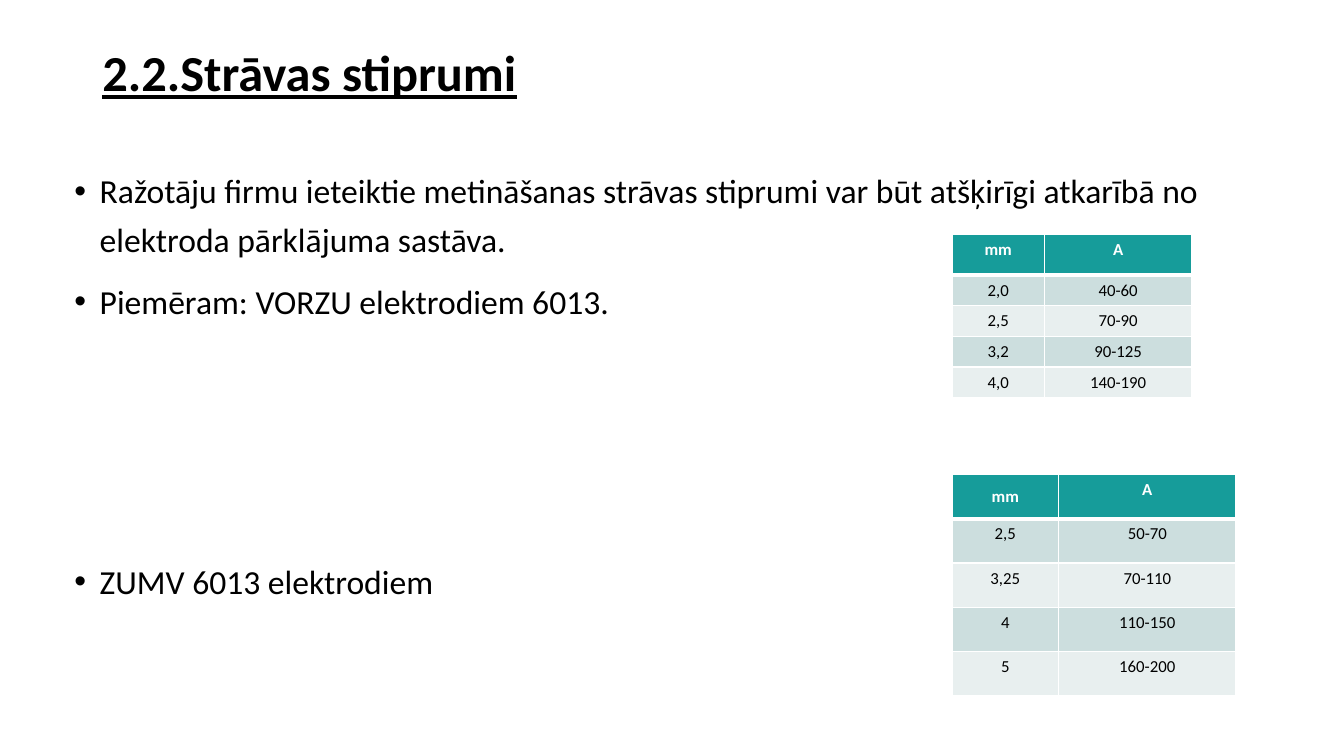
import pptx
import pptx.dml.color
import pptx.enum.text
import pptx.oxml
import pptx.oxml.ns
import pptx.util

Pt = pptx.util.Pt
RGBColor = pptx.dml.color.RGBColor
Align = pptx.enum.text.PP_ALIGN
Anchor = pptx.enum.text.MSO_ANCHOR

FONT = "Calibri"
BLACK = RGBColor(0x00, 0x00, 0x00)
WHITE = RGBColor(0xFF, 0xFF, 0xFF)
TEAL = RGBColor(0x16, 0x9C, 0x9A)
BAND_DARK = RGBColor(0xCC, 0xDE, 0xDE)
BAND_LIGHT = RGBColor(0xE8, 0xEF, 0xEF)

TITLE = "2.2.Strāvas stiprumi"
# Each bullet with its space before in points
BULLETS = [
    ("Ražotāju firmu ieteiktie metināšanas strāvas stiprumi var būt "
     "atšķirīgi atkarībā no elektroda pārklājuma sastāva.", 0),
    ("Piemēram: VORZU elektrodiem 6013.", 10),
    ("ZUMV 6013 elektrodiem", 165),
]
HEADER = ("mm", "A")
FIRST_CURRENTS = [HEADER, ("2,0", "40-60"), ("2,5", "70-90"),
                  ("3,2", "90-125"), ("4,0", "140-190")]
SECOND_CURRENTS = [HEADER, ("2,5", "50-70"), ("3,25", "70-110"),
                   ("4", "110-150"), ("5", "160-200")]


def set_font(paragraph, size, color, bold=False):
    font = paragraph.font
    font.name, font.size, font.bold = FONT, Pt(size), bold
    font.color.rgb = color


def place_placeholder(shape, left, top, width, height):
    shape.left, shape.top = Pt(left), Pt(top)
    shape.width, shape.height = Pt(width), Pt(height)
    frame = shape.text_frame
    frame.word_wrap = True
    frame.auto_size = pptx.enum.text.MSO_AUTO_SIZE.NONE
    frame.vertical_anchor = Anchor.TOP
    return frame


def fill_title(shape):
    frame = place_placeholder(shape, 66, 31, 828, 104.4)
    paragraph = frame.paragraphs[0]
    paragraph.text = TITLE
    paragraph.alignment = Align.LEFT
    paragraph.line_spacing = 0.9
    set_font(paragraph, 36, BLACK, bold=True)
    paragraph.font.underline = True


def fill_bullets(shape):
    frame = place_placeholder(shape, 46, 112.3, 848, 429)
    for index, (text, space_before) in enumerate(BULLETS):
        paragraph = frame.paragraphs[0] if index == 0 else frame.add_paragraph()
        paragraph.text = text
        paragraph.line_spacing = 1.2
        paragraph.space_before = Pt(space_before)
        properties = paragraph._p.get_or_add_pPr()
        properties.set("marL", str(Pt(18)))
        properties.set("indent", str(-Pt(18)))
        set_font(paragraph, 24, BLACK)


def set_borders(cell, top=1, bottom=1):
    """Draw white cell borders; widths in points."""
    namespace = pptx.oxml.ns.nsdecls("a")
    properties = cell._tc.get_or_add_tcPr()
    for side, width in (("L", 1), ("R", 1), ("T", top), ("B", bottom)):
        properties.append(pptx.oxml.parse_xml(
            f'<a:ln{side} {namespace} w="{Pt(width)}"><a:solidFill>'
            f'<a:srgbClr val="{WHITE}"/></a:solidFill></a:ln{side}>'))


def format_cell(cell, text, row):
    is_header = row == 0
    set_borders(cell, top=3 if row == 1 else 1, bottom=3 if is_header else 1)
    cell.fill.solid()
    cell.fill.fore_color.rgb = (
        TEAL if is_header else BAND_DARK if row % 2 else BAND_LIGHT)
    paragraph = cell.text_frame.paragraphs[0]
    paragraph.text = text
    paragraph.alignment = Align.CENTER
    set_font(paragraph, 12, WHITE if is_header else BLACK, bold=is_header)


def add_current_table(slide, top, widths, heights, rows):
    frame = slide.shapes.add_table(len(rows), len(widths), Pt(680), Pt(top),
                                   Pt(sum(widths)), Pt(sum(heights)))
    table = frame.table
    for column, width in zip(table.columns, widths):
        column.width = Pt(width)
    for row, (values, height) in enumerate(zip(rows, heights)):
        table.rows[row].height = Pt(height)
        for column, text in enumerate(values):
            format_cell(table.cell(row, column), text, row)
    return table


def main():
    presentation = pptx.Presentation()
    presentation.slide_width, presentation.slide_height = Pt(960), Pt(540)
    slide = presentation.slides.add_slide(presentation.slide_layouts[1])
    fill_title(slide.shapes.title)
    fill_bullets(slide.placeholders[1])
    add_current_table(slide, 167.4, (66, 105.4), [29.2] + [18] * 4,
                      FIRST_CURRENTS)
    second_table = add_current_table(slide, 339, (76.2, 126.7), [31.6] * 5,
                                     SECOND_CURRENTS)
    second_table.cell(0, 0).vertical_anchor = Anchor.MIDDLE
    presentation.save("out.pptx")


if __name__ == "__main__":
    main()
